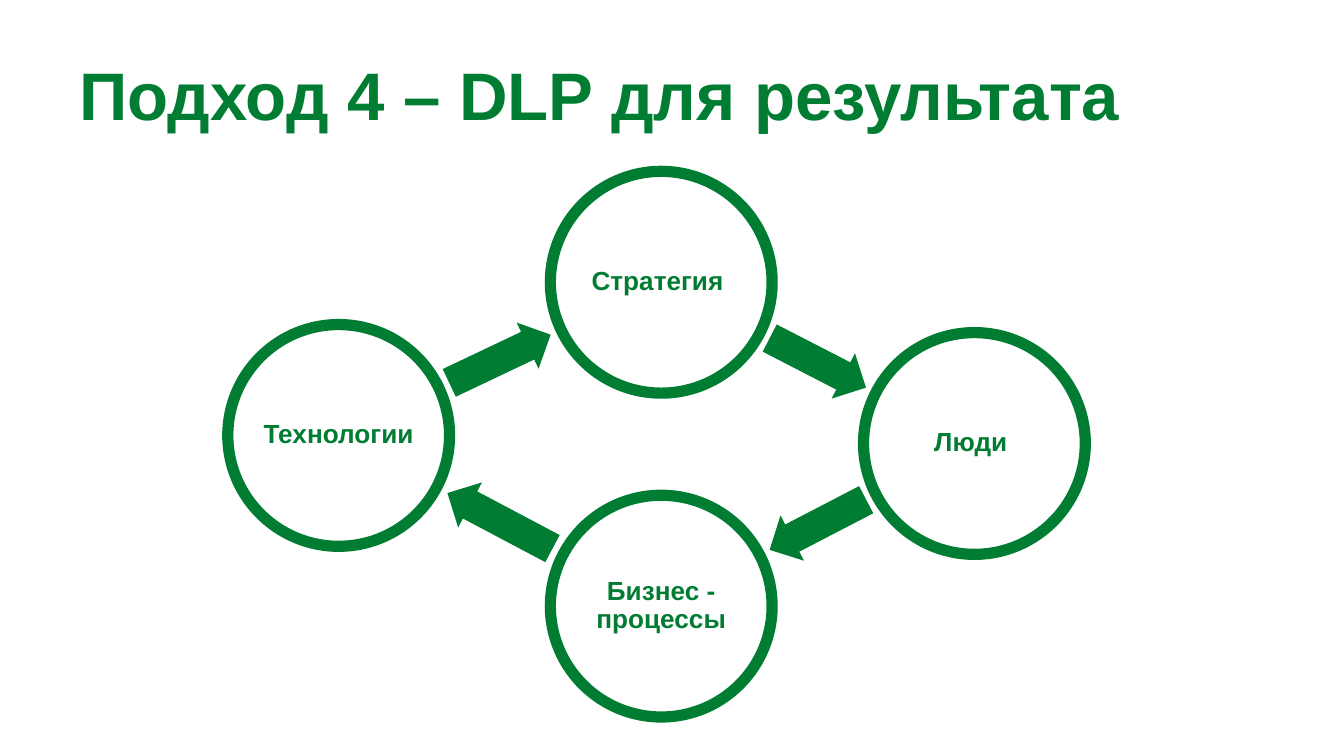
from dataclasses import dataclass
from math import atan2, degrees, hypot

from pptx import Presentation
from pptx.dml.color import RGBColor
from pptx.enum.shapes import MSO_SHAPE
from pptx.enum.text import MSO_ANCHOR, PP_ALIGN
from pptx.util import Inches, Pt


@dataclass(frozen=True)
class Theme:
    green: RGBColor = RGBColor(0x00, 0x7D, 0x32)
    white: RGBColor = RGBColor(0xFF, 0xFF, 0xFF)
    font: str = "Arial"
    title_size: int = 36
    label_size: int = 14
    ring_width: int = 6


def write(frame, text, *, theme, size, align=PP_ALIGN.LEFT, anchor=MSO_ANCHOR.TOP,
          spacing=1.0, insets=(0.12, 0.06, 0.12, 0.06)):
    frame.word_wrap = True
    frame.vertical_anchor = anchor
    frame.margin_left, frame.margin_top, frame.margin_right, frame.margin_bottom = map(Inches, insets)
    paragraph = frame.paragraphs[0]
    paragraph.alignment = align
    paragraph.line_spacing = spacing
    run = paragraph.add_run()
    run.text = text
    run.font.name = theme.font
    run.font.size = Pt(size)
    run.font.bold = True
    run.font.color.rgb = theme.green


class CycleSlide:
    """Draws a titled cycle of rings and arrows on one slide."""

    def __init__(self, slide, theme):
        self.shapes = slide.shapes
        self.theme = theme

    def title(self, text, left, top, width, height):
        box = self.shapes.add_textbox(*map(Inches, (left, top, width, height)))
        write(box.text_frame, text, theme=self.theme, size=self.theme.title_size)

    def solid(self, kind, center, width, height, fill):
        x, y = center
        shape = self.shapes.add_shape(
            kind, *map(Inches, (x - width / 2, y - height / 2, width, height)))
        shape.shadow.inherit = False
        shape.fill.solid()
        shape.fill.fore_color.rgb = fill
        return shape

    def ring(self, text, center, diameter):
        ring = self.solid(MSO_SHAPE.OVAL, center, diameter, diameter, self.theme.white)
        ring.line.color.rgb = self.theme.green
        ring.line.width = Pt(self.theme.ring_width)
        write(ring.text_frame, text, theme=self.theme, size=self.theme.label_size,
              align=PP_ALIGN.CENTER, anchor=MSO_ANCHOR.MIDDLE, spacing=0.9,
              insets=(0.01, 0.02, 0.01, 0.02))

    def arrow(self, start, end, diameter, thickness=0.38, share=0.83):
        dx, dy = end[0] - start[0], end[1] - start[1]
        middle = start[0] + dx / 2, start[1] + dy / 2
        length = share * (hypot(dx, dy) - diameter)
        arrow = self.solid(MSO_SHAPE.RIGHT_ARROW, middle, length, thickness, self.theme.green)
        arrow.line.fill.background()
        arrow.adjustments[0] = 0.6
        arrow.adjustments[1] = 0.5
        arrow.rotation = degrees(atan2(dy, dx)) % 360


def main():
    deck = Presentation()
    deck.slide_width = Inches(10)
    deck.slide_height = Inches(10 * 9 / 16)
    cycle = CycleSlide(deck.slides.add_slide(deck.slide_layouts[6]), Theme())
    cycle.title("Подход 4 – DLP для результата", 0.47, 0.34, 8.03, 0.5)

    diameter = 1.65
    stages = {
        "Стратегия ": (4.92, 2.1),
        "Люди ": (7.25, 3.3),
        "Бизнес - процессы": (4.92, 4.51),
        "Технологии": (2.52, 3.24),
    }
    for name, center in stages.items():
        cycle.ring(name, center, diameter)
    centers = list(stages.values())
    for start, end in zip(centers, centers[1:] + centers[:1]):
        cycle.arrow(start, end, diameter)

    deck.save("out.pptx")


if __name__ == "__main__":
    main()
